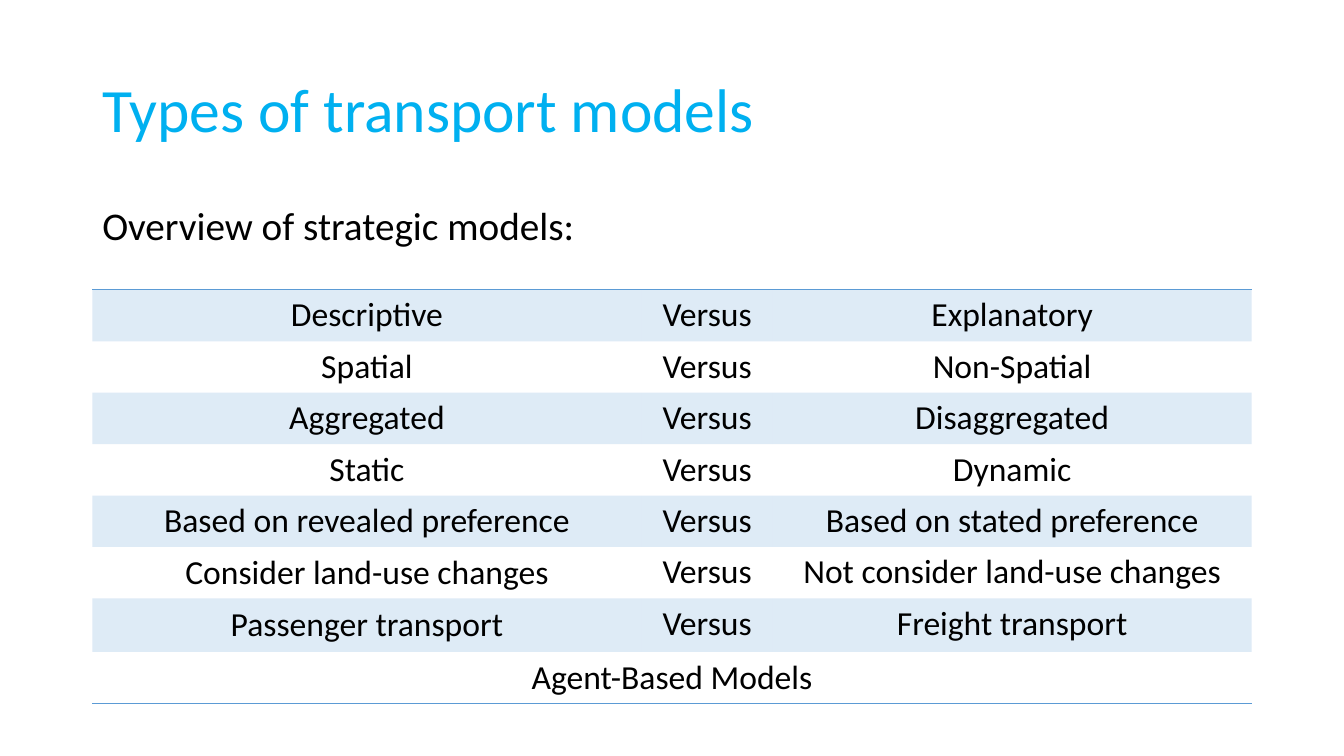
from dataclasses import dataclass

from lxml import etree
from pptx import Presentation
from pptx.dml.color import RGBColor
from pptx.enum.text import MSO_ANCHOR, PP_ALIGN
from pptx.oxml.ns import qn
from pptx.util import Pt

PX = 9525
LEFT, CENTER = PP_ALIGN.LEFT, PP_ALIGN.CENTER
TOP, MIDDLE = MSO_ANCHOR.TOP, MSO_ANCHOR.MIDDLE
BLANK_LAYOUT = 6
PLAIN_TABLE_STYLE = "{2D5ABB26-0587-4C30-8999-92F81FD0307C}"


@dataclass(frozen=True)
class Theme:
    font: str = "Calibri"
    title_color: str = "00B0F0"
    text_color: str = "000000"
    accent: str = "5B9BD5"
    band_opacity: int = 20
    rule_width: int = 1
    title_size: int = 44
    body_size: int = 28
    table_size: int = 24


THEME = Theme()

# Content and layout, in px
MARGIN, CONTENT_WIDTH = 88, 1104
TABLE_TOP = 276
COLUMN_WIDTHS = [523, 125, 456]
ROW_HEIGHT, TALL_ROW_HEIGHT = 49, 51
MODEL_PAIRS = [
    ("Descriptive", "Explanatory"),
    ("Spatial", "Non-Spatial"),
    ("Aggregated", "Disaggregated"),
    ("Static", "Dynamic"),
    ("Based on revealed preference", "Based on stated preference"),
    ("Consider land-use changes", "Not consider land-use changes"),
    ("Passenger transport", "Freight transport"),
]


def write_text(frame, text, *, size, color=THEME.text_color, align=LEFT,
               line_spacing=None, space_before=None):
    para = frame.paragraphs[0]
    para.alignment = align
    if line_spacing:
        para.line_spacing = line_spacing
    if space_before:
        para.space_before = Pt(space_before)
    span = para.add_run()
    span.text = text
    span.font.name = THEME.font
    span.font.size = Pt(size)
    span.font.color.rgb = RGBColor.from_string(color)


def add_text_box(page, top, height, text, *, anchor=TOP, **text_format):
    box = page.shapes.add_textbox(MARGIN * PX, top * PX, CONTENT_WIDTH * PX, height * PX)
    box.text_frame.word_wrap = True
    box.text_frame.vertical_anchor = anchor
    write_text(box.text_frame, text, line_spacing=0.9, **text_format)


def shade_cell(cell):
    cell.fill.solid()
    cell.fill.fore_color.rgb = RGBColor.from_string(THEME.accent)
    color = cell.fill._xPr.find(qn("a:solidFill"))[0]
    etree.SubElement(color, qn("a:alpha"), val=str(THEME.band_opacity * 1000))


def rule_cell(cell, side):
    line = etree.Element(qn(f"a:ln{side}"), w=str(Pt(THEME.rule_width)))
    fill = etree.SubElement(line, qn("a:solidFill"))
    etree.SubElement(fill, qn("a:srgbClr"), val=THEME.accent)
    cell._tc.get_or_add_tcPr().insert(0, line)


def fill_cell(cell, text, anchor):
    cell.vertical_anchor = anchor
    write_text(cell.text_frame, text, size=THEME.table_size, align=CENTER)


def add_model_table(page):
    last = len(MODEL_PAIRS)
    heights = [ROW_HEIGHT] * (last + 1)
    heights[last - 1] = TALL_ROW_HEIGHT
    table = page.shapes.add_table(
        last + 1, len(COLUMN_WIDTHS), MARGIN * PX, TABLE_TOP * PX,
        CONTENT_WIDTH * PX, sum(heights) * PX).table
    table.first_row = table.horz_banding = False
    table._tbl.tblPr.find(qn("a:tableStyleId")).text = PLAIN_TABLE_STYLE
    for column, width in zip(table.columns, COLUMN_WIDTHS):
        column.width = width * PX
    for row, height in zip(table.rows, heights):
        row.height = height * PX

    # Opposing model types, with every other row shaded
    for index, (first, second) in enumerate(MODEL_PAIRS):
        for column, text in enumerate((first, "Versus", second)):
            cell = table.cell(index, column)
            fill_cell(cell, text, TOP if column else MIDDLE)
            if index % 2 == 0:
                shade_cell(cell)

    # Closing row across the full width
    closing = table.cell(last, 0)
    closing.merge(table.cell(last, len(COLUMN_WIDTHS) - 1))
    fill_cell(closing, "Agent-Based Models", MIDDLE)

    # Rules above and below the table
    for column in range(len(COLUMN_WIDTHS)):
        rule_cell(table.cell(0, column), "T")
        rule_cell(table.cell(last, column), "B")


def main():
    deck = Presentation()
    deck.slide_width, deck.slide_height = 1280 * PX, 720 * PX
    page = deck.slides.add_slide(deck.slide_layouts[BLANK_LAYOUT])

    add_text_box(page, 38, 139, "Types of transport models", anchor=MIDDLE,
                 size=THEME.title_size, color=THEME.title_color)
    add_text_box(page, 192, 457, "Overview of strategic models:",
                 size=THEME.body_size, space_before=10)
    add_model_table(page)

    deck.save("out.pptx")


if __name__ == "__main__":
    main()
